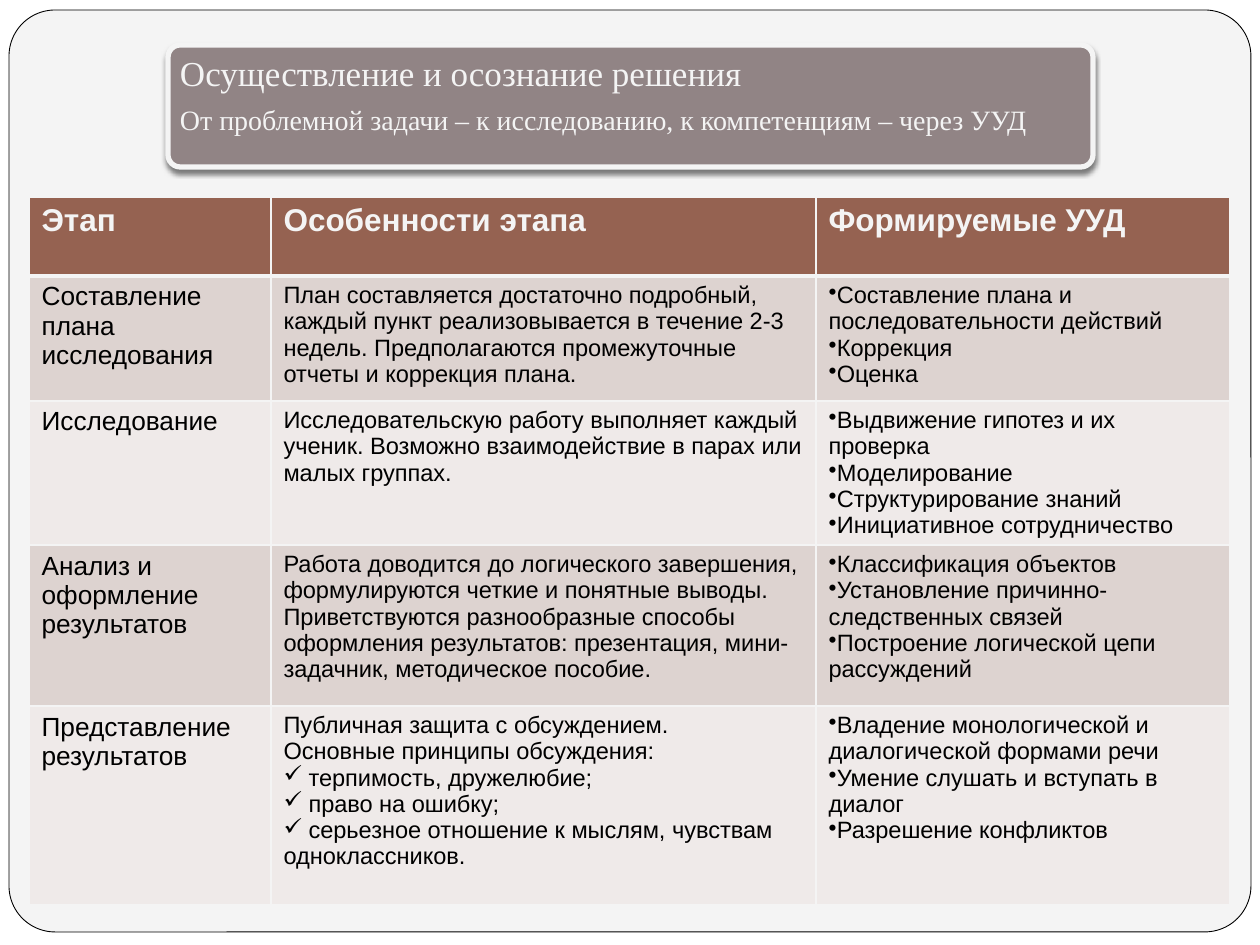
from lxml import etree
from pptx import Presentation
from pptx.dml.color import RGBColor
from pptx.enum.shapes import MSO_SHAPE
from pptx.enum.text import MSO_ANCHOR
from pptx.oxml.ns import qn
from pptx.util import Emu, Pt

RECT = MSO_SHAPE.RECTANGLE
ROUND = MSO_SHAPE.ROUNDED_RECTANGLE
MIDDLE = MSO_ANCHOR.MIDDLE

WHITE = RGBColor(0xFF, 0xFF, 0xFF)
PALE = RGBColor(0xF4, 0xF4, 0xF4)
BLACK = RGBColor(0, 0, 0)
MAUVE = RGBColor(0x91, 0x84, 0x85)
BROWN = RGBColor(0x95, 0x62, 0x51)
BANDS = RGBColor(0xDD, 0xD3, 0xD0), RGBColor(0xEF, 0xEA, 0xE9)

SANS = "Arial"
SERIF = "Times New Roman"
SCALE = 914400 / 126

TITLE = [
    ("Осуществление и осознание решения", 20, 7),
    ("От проблемной задачи – к исследованию, к компетенциям – через УУД", 16, 6),
]
HEADS = ["Этап", "Особенности этапа", "Формируемые УУД"]
STAGES = [
    ("Составление плана исследования",
     ["План составляется достаточно подробный, каждый пункт реализовывается "
      "в течение 2-3 недель. Предполагаются промежуточные отчеты и коррекция плана."],
     [],
     ["Составление плана и последовательности действий", "Коррекция", "Оценка"]),
    ("Исследование",
     ["Исследовательскую работу выполняет каждый ученик. Возможно "
      "взаимодействие в парах или малых группах."],
     [],
     ["Выдвижение гипотез и их проверка", "Моделирование",
      "Структурирование знаний", "Инициативное сотрудничество"]),
    ("Анализ и оформление результатов",
     ["Работа доводится до логического завершения, формулируются четкие и "
      "понятные выводы.",
      "Приветствуются разнообразные способы оформления результатов: "
      "презентация, мини-задачник, методическое пособие."],
     [],
     ["Классификация объектов", "Установление причинно-следственных связей",
      "Построение логической цепи рассуждений"]),
    ("Представление результатов",
     ["Публичная защита с обсуждением.", "Основные принципы обсуждения:"],
     [" терпимость, дружелюбие;", " право на ошибку;",
      " серьезное отношение к мыслям, чувствам одноклассников."],
     ["Владение монологической и диалогической формами речи",
      "Умение слушать и вступать в диалог", "Разрешение конфликтов"]),
]
COLS = [242, 545, 414]
ROWS = [79, 125, 125, 161, 199]


def px(num):
    return Emu(round(num * SCALE))


def add_run(para, text, size, font, color, bold=False):
    run = para.add_run()
    run.text = text
    run.font.size = Pt(size)
    run.font.name = font
    run.font.color.rgb = color
    run.font.bold = bold


def add_box(shapes, kind, box, fill, line=None, width=0, curve=None):
    shape = shapes.add_shape(kind, *map(px, box))
    shape.shadow.inherit = False
    shape.fill.solid()
    shape.fill.fore_color.rgb = fill
    if line is None:
        shape.line.fill.background()
    else:
        shape.line.color.rgb = line
        shape.line.width = Pt(width)
    if curve is not None:
        shape.adjustments[0] = curve
    return shape


def add_shade(shape):
    effects = shape.element.spPr.find(qn("a:effectLst"))
    shade = etree.SubElement(effects, qn("a:outerShdw"), blurRad=str(Pt(3)),
                             dist=str(Pt(2)), dir="5400000", rotWithShape="0")
    color = etree.SubElement(shade, qn("a:srgbClr"), val=str(BLACK))
    etree.SubElement(color, qn("a:alpha"), val="50000")


def draw_frame(slide, box):
    left, top, width, height = box
    add_box(slide.shapes, RECT, box, WHITE)
    inner = left + 9, top + 10, width - 18, height - 23
    add_box(slide.shapes, ROUND, inner, PALE, BLACK, 0.5, 0.05)


def draw_title(slide, box):
    left, top, width, height = box
    group = slide.shapes.add_group_shape()
    add_shade(add_box(group.shapes, ROUND, box, MAUVE, PALE, 3, 0.1))
    label = group.shapes.add_textbox(
        px(left + 3), px(top - 6), px(width - 14), px(height - 7))
    frame = label.text_frame
    frame.word_wrap = True
    frame.vertical_anchor = MIDDLE
    frame.margin_left = frame.margin_right = px(9)
    frame.margin_top = frame.margin_bottom = px(9)
    for at, (text, size, gap) in enumerate(TITLE):
        para = frame.add_paragraph() if at else frame.paragraphs[0]
        para.line_spacing = 0.9
        para.space_after = Pt(gap)
        add_run(para, text, size, SERIF, PALE)


def set_edge(cell, side, width):
    props = cell._tc.get_or_add_tcPr()
    edge = etree.SubElement(props, qn("a:" + side), w=str(Pt(width)))
    fill = etree.SubElement(edge, qn("a:solidFill"))
    etree.SubElement(fill, qn("a:srgbClr"), val=str(PALE))


def fill_cell(cell, row, items, size):
    head = row == 0
    widths = {"lnL": 1, "lnR": 1, "lnT": 3 if row == 1 else 1, "lnB": 3 if head else 1}
    for side, width in widths.items():
        set_edge(cell, side, width)
    cell.fill.solid()
    cell.fill.fore_color.rgb = BROWN if head else BANDS[(row - 1) % 2]
    frame = cell.text_frame
    for at, (mark, text) in enumerate(items):
        para = frame.add_paragraph() if at else frame.paragraphs[0]
        if mark:
            props = para._p.get_or_add_pPr()
            etree.SubElement(props, qn("a:buChar"), char=mark)
        add_run(para, text, size, SANS, PALE if head else BLACK, head)


def mark_all(mark, texts):
    return [(mark, text) for text in texts]


def draw_table(slide, box):
    shape = slide.shapes.add_table(len(ROWS), len(COLS), *map(px, box))
    table = shape.table
    table.horz_banding = False
    for col, width in zip(table.columns, COLS):
        col.width = px(width)
    for row, height in zip(table.rows, ROWS):
        row.height = px(height)
    for at, head in enumerate(HEADS):
        fill_cell(table.cell(0, at), 0, [("", head)], 18)
    for row, (stage, plain, ticks, dots) in enumerate(STAGES, 1):
        fill_cell(table.cell(row, 0), row, [("", stage)], 15)
        traits = mark_all("", plain) + mark_all("✓", ticks)
        fill_cell(table.cell(row, 1), row, traits, 13.5)
        fill_cell(table.cell(row, 2), row, mark_all("•", dots), 13.5)


def main():
    deck = Presentation()
    deck.slide_width = px(1260)
    deck.slide_height = px(945)
    slide = deck.slides.add_slide(deck.slide_layouts[6])
    slide.background.fill.solid()
    slide.background.fill.fore_color.rgb = PALE
    draw_frame(slide, (0, 0, 1260, 945))
    draw_table(slide, (29, 197, sum(COLS), sum(ROWS)))
    draw_title(slide, (168, 45, 925, 122))
    deck.save("out.pptx")


if __name__ == "__main__":
    main()
